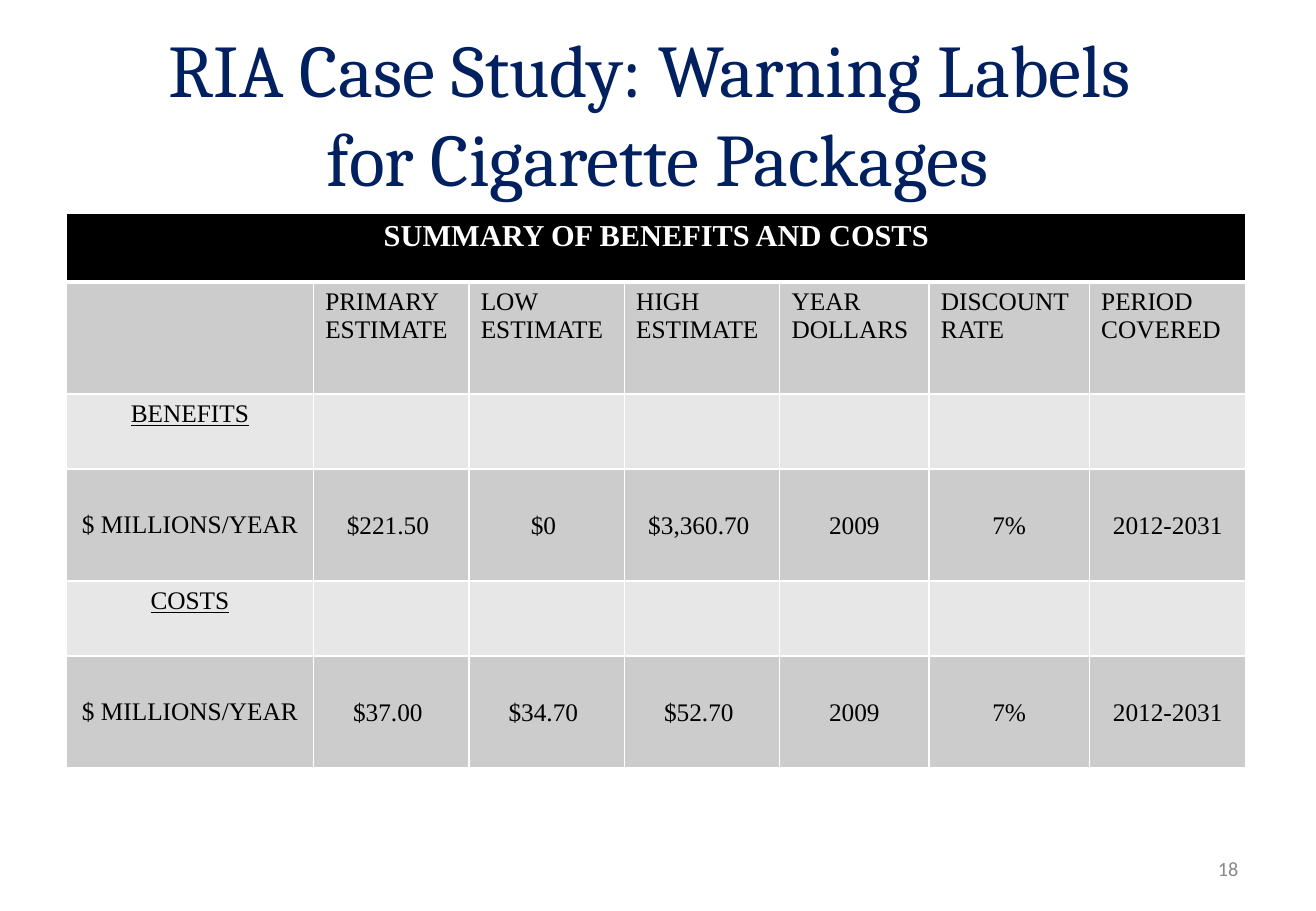
import pptx
import pptx.dml.color
import pptx.enum.text
import pptx.oxml
import pptx.oxml.ns
import pptx.util

Cm = pptx.util.Cm
Pt = pptx.util.Pt
ALIGN = pptx.enum.text.PP_ALIGN
ANCHOR = pptx.enum.text.MSO_ANCHOR

COLOURS = {
    "title": "002060",
    "number": "898989",
    "banner": "000000",
    "dark_row": "CCCCCC",
    "light_row": "E7E7E7",
    "border": "FFFFFF",
    "banner_text": "FFFFFF",
    "text": "000000",
}
TABLE_FONT = "Times New Roman"
COLUMN_WIDTHS = [5.16, 3.25, 3.25, 3.25, 3.12, 3.35, 3.28]
ROW_HEIGHTS = [1.45, 2.34, 1.57, 2.34, 1.57, 2.34]
WIDE_MARGINS = (0.25, 0.13, 0.25, 0.13)
NARROW_MARGINS = (0.03, 0.03, 0.03, 0)

BANNER = "SUMMARY OF BENEFITS AND COSTS"
HEADINGS = [
    ["PRIMARY", "ESTIMATE"],
    ["LOW", "ESTIMATE"],
    ["HIGH", "ESTIMATE"],
    ["YEAR", "DOLLARS"],
    ["DISCOUNT", "RATE"],
    ["PERIOD", "COVERED"],
]
UNIT = "$ MILLIONS/YEAR"
SECTIONS = [
    ("BENEFITS", ["$221.50 ", "$0 ", "$3,360.70 ", "2009", "7%", "2012-2031"]),
    ("COSTS", ["$37.00 ", "$34.70 ", "$52.70 ", "2009", "7%", "2012-2031"]),
]


def rgb(name):
    return pptx.dml.color.RGBColor.from_string(COLOURS[name])


def add_run(paragraph, text, font, size, colour, bold=False, underline=False):
    run = paragraph.add_run()
    run.text = text
    run.font.name = font
    run.font.size = Pt(size)
    run.font.color.rgb = rgb(colour)
    run.font.bold = bold
    run.font.underline = underline


def add_title(slide):
    title = slide.shapes.title
    title.left, title.top, title.width, title.height = Cm(1.37), Cm(0.76), Cm(24.77), Cm(3.18)
    frame = title.text_frame
    frame.word_wrap = True
    frame.auto_size = pptx.enum.text.MSO_AUTO_SIZE.NONE
    frame.vertical_anchor = ANCHOR.MIDDLE
    paragraph = frame.paragraphs[0]
    paragraph.alignment = ALIGN.CENTER
    add_run(paragraph, "RIA Case Study: Warning Labels ", "Cambria", 44, "title")
    paragraph.add_line_break()
    add_run(paragraph, "for Cigarette Packages", "Cambria", 44, "title")


def add_page_number(slide, number):
    box = slide.shapes.add_textbox(Cm(19.71), Cm(17.65), Cm(6.43), Cm(1.02))
    frame = box.text_frame
    frame.word_wrap = True
    frame.vertical_anchor = ANCHOR.MIDDLE
    paragraph = frame.paragraphs[0]
    paragraph.alignment = ALIGN.RIGHT
    add_run(paragraph, number, "Calibri", 12, "number")


def style_cell(cell, fill, top=1, bottom=1):
    properties = cell._tc.get_or_add_tcPr()
    for side, width in (("L", 1), ("R", 1), ("T", top), ("B", bottom)):
        properties.append(pptx.oxml.parse_xml(
            f'<a:ln{side} {pptx.oxml.ns.nsdecls("a")} w="{Pt(width)}">'
            f'<a:solidFill><a:srgbClr val="{COLOURS["border"]}"/></a:solidFill>'
            f'</a:ln{side}>'
        ))
    cell.fill.solid()
    cell.fill.fore_color.rgb = rgb(fill)


def write_cell(cell, lines, alignment=ALIGN.CENTER, anchor=ANCHOR.TOP,
               margins=WIDE_MARGINS, size=15, colour="text", **emphasis):
    cell.margin_left, cell.margin_top, cell.margin_right, cell.margin_bottom = map(Cm, margins)
    cell.vertical_anchor = anchor
    frame = cell.text_frame
    for index, line in enumerate(lines):
        paragraph = frame.add_paragraph() if index else frame.paragraphs[0]
        paragraph.alignment = alignment
        add_run(paragraph, line, TABLE_FONT, size, colour, **emphasis)


def add_summary_table(slide):
    frame = slide.shapes.add_table(
        len(ROW_HEIGHTS), len(COLUMN_WIDTHS), Cm(1.39), Cm(4.45),
        Cm(sum(COLUMN_WIDTHS)), Cm(sum(ROW_HEIGHTS)),
    )
    table = frame.table
    for column, width in zip(table.columns, COLUMN_WIDTHS):
        column.width = Cm(width)
    for index, (row, height) in enumerate(zip(table.rows, ROW_HEIGHTS)):
        row.height = Cm(height)
        fill = "banner" if index == 0 else "dark_row" if index % 2 else "light_row"
        for cell in row.cells:
            style_cell(cell, fill, top=3 if index == 1 else 1, bottom=3 if index == 0 else 1)

    table.cell(0, 0).merge(table.cell(0, len(COLUMN_WIDTHS) - 1))
    write_cell(table.cell(0, 0), [BANNER], size=18, colour="banner_text", bold=True)
    for column, lines in enumerate(HEADINGS, start=1):
        write_cell(table.cell(1, column), lines, alignment=ALIGN.LEFT)
    for index, (name, values) in enumerate(SECTIONS):
        row = 2 + 2 * index
        write_cell(table.cell(row, 0), [name], underline=True)
        write_cell(table.cell(row + 1, 0), [UNIT], anchor=ANCHOR.MIDDLE)
        for column, value in enumerate(values, start=1):
            write_cell(table.cell(row + 1, column), [value],
                       anchor=ANCHOR.MIDDLE, margins=NARROW_MARGINS)


def main():
    presentation = pptx.Presentation()
    presentation.slide_width = Cm(27.51)
    presentation.slide_height = Cm(19.05)
    slide = presentation.slides.add_slide(presentation.slide_layouts[5])
    add_title(slide)
    add_page_number(slide, "18")
    add_summary_table(slide)
    presentation.save("out.pptx")


if __name__ == "__main__":
    main()
